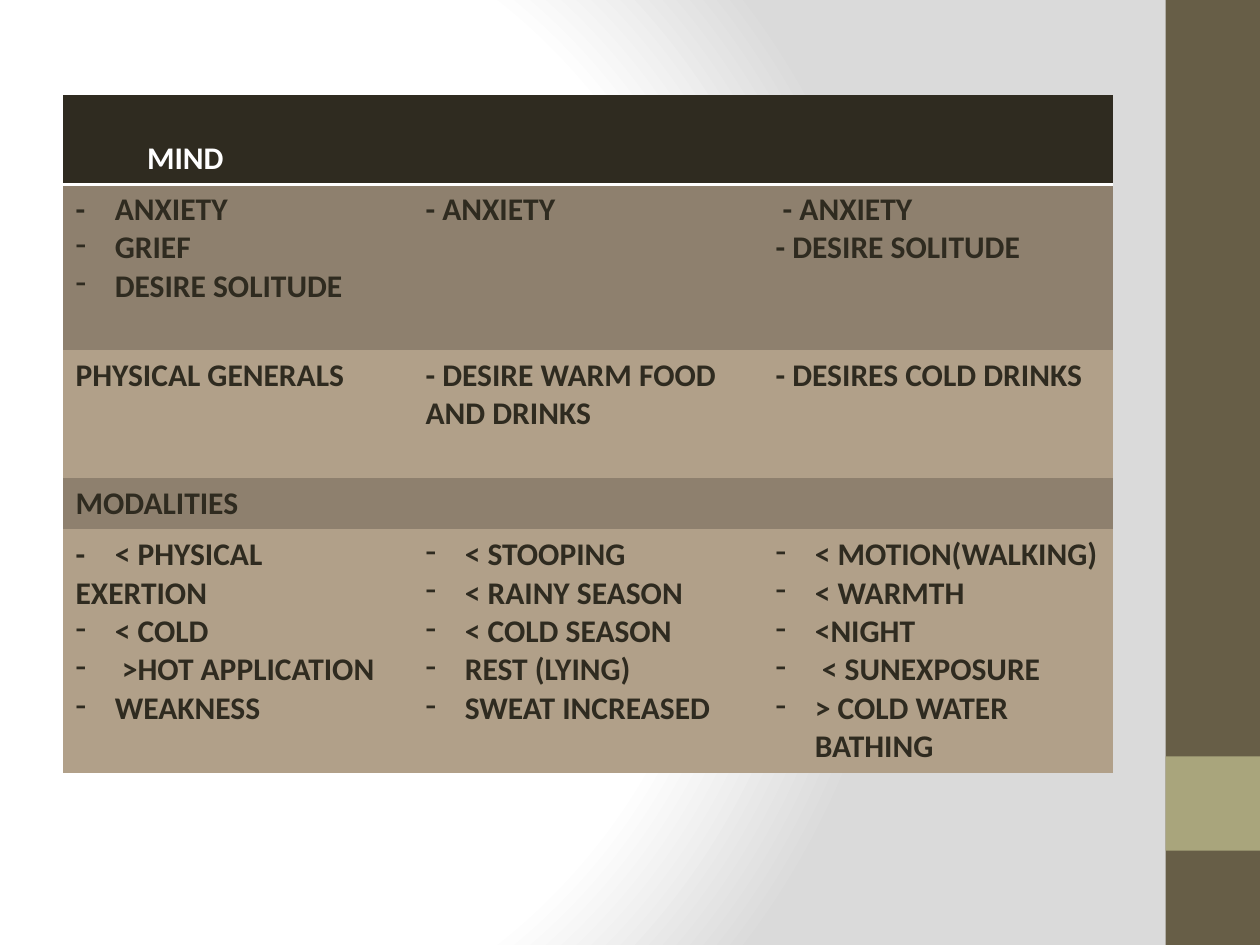
from dataclasses import dataclass

from lxml.etree import SubElement
from pptx import Presentation
from pptx.dml.color import RGBColor
from pptx.enum.shapes import MSO_SHAPE
from pptx.enum.text import MSO_ANCHOR
from pptx.oxml import parse_xml
from pptx.oxml.ns import nsdecls, qn
from pptx.util import Cm, Pt


@dataclass(frozen=True)
class Theme:
    """Colours, font and type size of the deck."""
    paper: str = "FFFFFF"
    shade: str = "DADADA"
    bar: str = "675E47"
    accent: str = "A9A57C"
    ink: str = "2F2B20"
    bands: tuple = ("8E806E", "B1A089")
    font: str = "Calibri"
    size: int = 18


THEME = Theme()
NO_STYLE = "{2D5ABB26-0587-4C30-8999-92F81FD0307C}"
HANGING = Cm(0.79)
HEADING_INDENT = Cm(1.44)
ROW_HEIGHTS = (1.8, 3.34, 2.58, 1.04, 4.9)
BULLET = "• "
ROWS = (
    (("MIND",), (), ()),
    (
        ("-\tANXIETY", "• GRIEF", "• DESIRE SOLITUDE"),
        ("- ANXIETY",),
        (" - ANXIETY", "- DESIRE SOLITUDE"),
    ),
    (
        ("PHYSICAL GENERALS",),
        ("- DESIRE WARM FOOD AND DRINKS",),
        ("- DESIRES COLD DRINKS",),
    ),
    (("MODALITIES",), (), ()),
    (
        ("-\t< PHYSICAL\vEXERTION", "• < COLD", "•  >HOT APPLICATION", "• WEAKNESS"),
        ("• < STOOPING", "• < RAINY SEASON", "• < COLD SEASON",
         "• REST (LYING)", "• SWEAT INCREASED"),
        ("• < MOTION(WALKING)", "• < WARMTH", "• <NIGHT",
         "•  < SUNEXPOSURE", "• > COLD WATER BATHING"),
    ),
)


def paint_background(slide):
    """Fill the slide with a circular gradient."""
    fill = slide.background.fill
    fill.gradient()
    properties = slide.background._cSld.bg.bgPr
    gradient = parse_xml(
        f'<a:gradFill {nsdecls("a")} rotWithShape="1"><a:gsLst>'
        f'<a:gs pos="0"><a:srgbClr val="{THEME.paper}"/></a:gs>'
        f'<a:gs pos="75000"><a:srgbClr val="{THEME.paper}"/></a:gs>'
        f'<a:gs pos="100000"><a:srgbClr val="{THEME.shade}"/></a:gs></a:gsLst>'
        '<a:path path="circle">'
        '<a:fillToRect l="20000" t="50000" r="100000" b="50000"/>'
        '</a:path></a:gradFill>'
    )
    properties.replace(properties.find(qn("a:gradFill")), gradient)


def add_block(slide, left, top, width, height, color):
    """Add a plain filled rectangle."""
    shape = slide.shapes.add_shape(MSO_SHAPE.RECTANGLE, left, top, width, height)
    shape.shadow.inherit = False
    shape.fill.solid()
    shape.fill.fore_color.rgb = RGBColor.from_string(color)
    shape.line.fill.background()


def add_side_bar(slide, left, top, width, height):
    """Add the side bar with its square accent near the foot."""
    add_block(slide, left, top, width, height, THEME.bar)
    add_block(slide, left, top + height - 2 * width, width, width, THEME.accent)


def write_paragraph(paragraph, text, color):
    """Write one entry, hanging its dash where the text asks for it."""
    paragraph.text = text.removeprefix(BULLET)
    properties = paragraph._p.get_or_add_pPr()
    if text.startswith(BULLET):
        properties.set("marL", str(HANGING))
        properties.set("indent", str(-HANGING))
        SubElement(properties, qn("a:buFontTx"))
        SubElement(properties, qn("a:buChar"), char="-")
    elif "\t" in text:
        tabs = SubElement(properties, qn("a:tabLst"))
        SubElement(tabs, qn("a:tab"), pos=str(HANGING), algn="l")
    for run in paragraph.runs:
        run.font.name = THEME.font
        run.font.size = Pt(THEME.size)
        run.font.bold = True
        run.font.color.rgb = RGBColor.from_string(color)


def fill_cell(cell, entries, fill, color):
    """Colour a cell and write its entries."""
    cell.fill.solid()
    cell.fill.fore_color.rgb = RGBColor.from_string(fill)
    frame = cell.text_frame
    frame.paragraphs[0].font.size = Pt(THEME.size)
    for index, text in enumerate(entries):
        paragraph = frame.add_paragraph() if index else frame.paragraphs[0]
        write_paragraph(paragraph, text, color)


def underline_cell(cell):
    """Draw a light rule below a cell."""
    border = parse_xml(
        f'<a:lnB {nsdecls("a")} w="{Pt(2)}"><a:solidFill>'
        f'<a:srgbClr val="{THEME.paper}"/></a:solidFill></a:lnB>'
    )
    cell._tc.get_or_add_tcPr().insert(0, border)


def add_symptom_table(slide, left, top, width):
    """Add the banded comparison table with its dark heading row."""
    columns = len(ROWS[0])
    height = Cm(sum(ROW_HEIGHTS))
    frame = slide.shapes.add_table(len(ROWS), columns, left, top, width, height)
    table = frame.table
    table._tbl.tblPr.find(qn("a:tableStyleId")).text = NO_STYLE
    for row_index, (row, row_height) in enumerate(zip(ROWS, ROW_HEIGHTS)):
        table.rows[row_index].height = Cm(row_height)
        heading = row_index == 0
        fill = THEME.ink if heading else THEME.bands[(row_index - 1) % 2]
        color = THEME.paper if heading else THEME.ink
        for column_index, entries in enumerate(row):
            cell = table.cell(row_index, column_index)
            fill_cell(cell, entries, fill, color)
            if heading:
                underline_cell(cell)
    heading_cell = table.cell(0, 0)
    heading_cell.vertical_anchor = MSO_ANCHOR.BOTTOM
    heading_cell.margin_left += HEADING_INDENT


def main():
    """Build and save the presentation."""
    presentation = Presentation()
    presentation.slide_width = Cm(25.4)
    presentation.slide_height = Cm(19.05)
    slide = presentation.slides.add_slide(presentation.slide_layouts[6])
    paint_background(slide)
    bar_width = Cm(1.9)
    add_side_bar(slide, presentation.slide_width - bar_width, 0,
                 bar_width, presentation.slide_height)
    add_symptom_table(slide, Cm(1.27), Cm(1.91), Cm(21.17))
    presentation.save("out.pptx")


if __name__ == "__main__":
    main()
